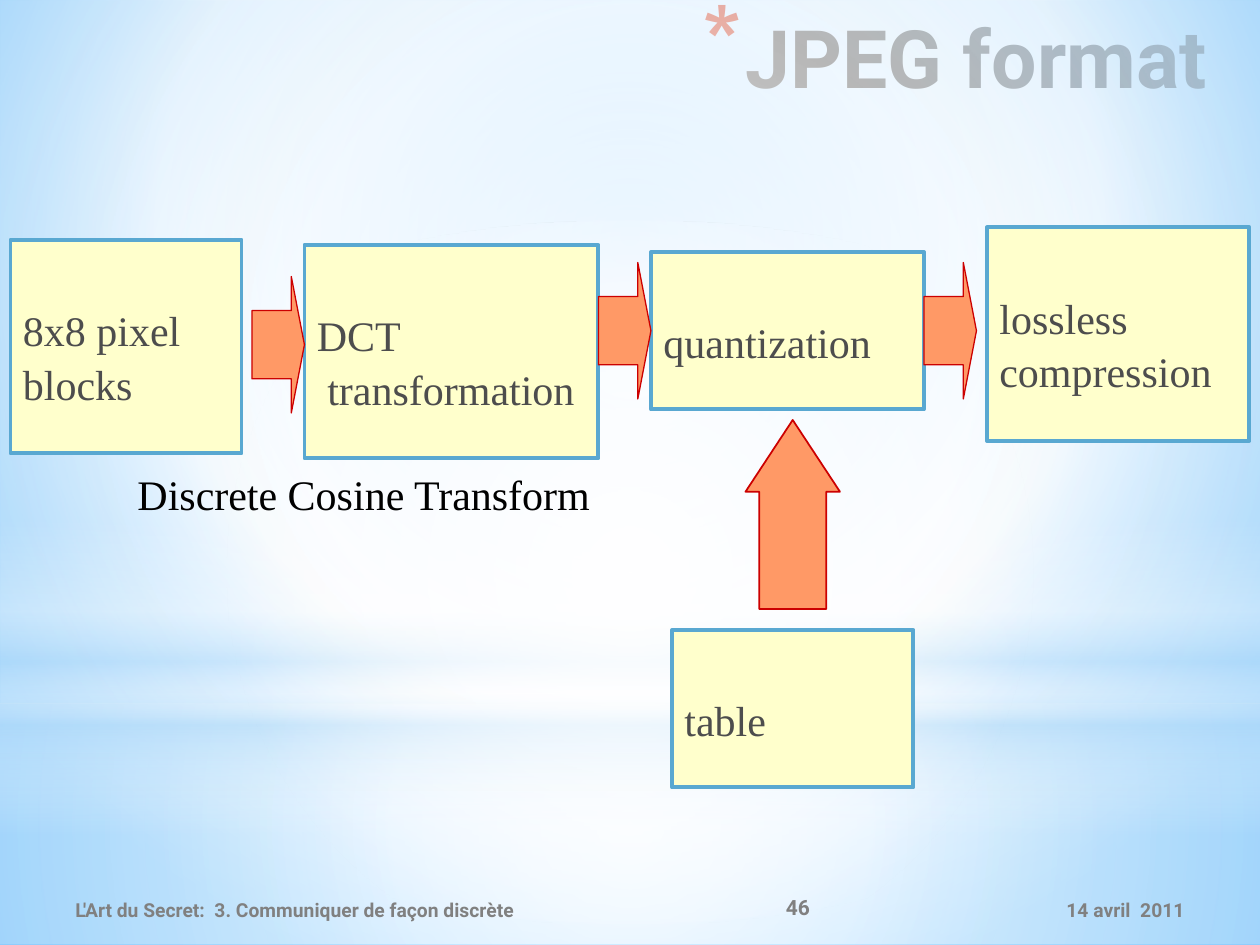
"""Build the slide showing the stages of the JPEG format."""
from pptx import Presentation
from pptx.dml.color import RGBColor
from pptx.enum.shapes import MSO_SHAPE
from pptx.enum.text import MSO_ANCHOR, MSO_AUTO_SIZE, PP_ALIGN
from pptx.oxml import parse_xml
from pptx.oxml.ns import nsdecls, qn
from pptx.util import Pt

RECTANGLE, OVAL = MSO_SHAPE.RECTANGLE, MSO_SHAPE.OVAL
RIGHT_ARROW, UP_ARROW = MSO_SHAPE.RIGHT_ARROW, MSO_SHAPE.UP_ARROW
TOP, MIDDLE = MSO_ANCHOR.TOP, MSO_ANCHOR.MIDDLE
LEFT, CENTER, RIGHT = PP_ALIGN.LEFT, PP_ALIGN.CENTER, PP_ALIGN.RIGHT
COLORS = {
    "white": "FFFFFF", "sky": "B4DCFA", "light blue": "9ED5FF", "deep blue": "5BB9FF",
    "cream": "FFFFCC", "box line": "59A8D1", "box text": "4D4D4D",
    "orange": "FF9966", "red": "CC0000", "bullet": "C3260C",
    "title": "404040", "footer": "808080", "black": "000000",
}
CENTERED = '<a:path path="circle"><a:fillToRect l="50000" t="50000" r="50000" b="50000"/></a:path>'
OFF_CENTER = '<a:path path="circle"><a:fillToRect l="20000" t="10000" r="20000" b="60000"/></a:path>'
DOWNWARD = '<a:lin ang="5400000" scaled="0"/>'


def paint_gradient(fill, element, stops, direction):
    fill.gradient()
    plain = next(element.iter(qn("a:gradFill")))
    stop_xml = "".join(
        f'<a:gs pos="{position * 1000}"><a:srgbClr val="{COLORS[color]}">'
        f'<a:alpha val="{opacity * 1000}"/></a:srgbClr></a:gs>'
        for position, color, opacity in stops)
    plain.getparent().replace(plain, parse_xml(
        f'<a:gradFill {nsdecls("a")} rotWithShape="1"><a:gsLst>{stop_xml}</a:gsLst>{direction}</a:gradFill>'))


def write_text(shape, lines, font, color, frame, alignment=LEFT, gap=0):
    text_frame = shape.text_frame
    for name, value in frame.items():
        setattr(text_frame, name, value)
    text_frame.text = "\n".join(lines)
    for paragraph in text_frame.paragraphs:
        paragraph.alignment = alignment
        paragraph.space_after = Pt(gap)
        for name, value in font.items():
            setattr(paragraph.runs[0].font, name, value)
        paragraph.runs[0].font.color.rgb = RGBColor.from_string(COLORS[color])


presentation = Presentation()
presentation.slide_width, presentation.slide_height = Pt(720), Pt(540)
slide = presentation.slides.add_slide(presentation.slide_layouts[5])
title = slide.shapes.title

paint_gradient(slide.background.fill, slide.element,
               [(0, "light blue", 100), (60, "white", 100), (100, "deep blue", 100)], OFF_CENTER)
glows = [
    (RECTANGLE, 402, 138, [(0, "white", 91), (37, "white", 76), (100, "sky", 79)], CENTERED),
    (RECTANGLE, 0, 402, [(0, "white", 89), (48, "white", 62), (100, "sky", 79)], CENTERED),
    (RECTANGLE, 297, 180, [(0, "white", 0), (29, "white", 30), (45, "sky", 40),
                           (55, "white", 26), (65, "sky", 60), (100, "white", 0)], DOWNWARD),
    (OVAL, 126, 402, [(0, "white", 100), (56, "white", 0)], CENTERED),
]
for kind, top, height, stops, direction in glows:
    shape = slide.shapes.add_shape(kind, 0, Pt(top), Pt(720), Pt(height))
    shape.shadow.inherit = False
    shape.line.fill.background()
    paint_gradient(shape.fill, shape.element, stops, direction)

title.left, title.top, title.width, title.height = Pt(0), Pt(1), Pt(708), Pt(90)
write_text(title, ["JPEG format "], {"name": "Roboto", "size": Pt(46), "bold": True}, "title",
           {"vertical_anchor": TOP, "auto_size": MSO_AUTO_SIZE.NONE, "word_wrap": True}, RIGHT)
properties = title.text_frame.paragraphs[0]._p.get_or_add_pPr()
properties.set("marL", str(Pt(25)))
properties.set("indent", str(-Pt(25)))
for bullet_xml in (f'<a:buClr {nsdecls("a")}><a:srgbClr val="{COLORS["bullet"]}"/></a:buClr>',
                   f'<a:buSzPct {nsdecls("a")} val="128000"/>',
                   f'<a:buChar {nsdecls("a")} char="*"/>'):
    properties.append(parse_xml(bullet_xml))

body_font = {"name": "Times New Roman", "size": Pt(24)}
box_frame = {"vertical_anchor": TOP, "word_wrap": True, "margin_top": Pt(37)}
boxes = [
    (6, 137, 132, 122, ["8x8 pixel", "blocks"]),
    (564, 130, 150, 122, ["lossless", "compression"]),
    (372, 144, 156, 90, ["quantization"]),
    (174, 140, 168, 122, ["DCT", " transformation"]),
    (384, 360, 138, 90, ["table"]),
]
arrows = [
    (RIGHT_ARROW, 528, 150, 30, 78, (0.5, 0.25), 0.75),
    (RIGHT_ARROW, 342, 150, 30, 78, (0.5, 0.25), 0.75),
    (RIGHT_ARROW, 144, 158, 30, 78, (0.5, 0.25), 0.75),
    (UP_ARROW, 426, 240, 54, 108, (0.71, 0.76), 1),
]
outlines = [(RECTANGLE, *box[:4], (), 2.25, "cream", "box line", box[4]) for box in boxes]
outlines += [(*arrow, "orange", "red", []) for arrow in arrows]
for kind, left, top, width, height, adjustments, weight, fill, line, lines in outlines:
    shape = slide.shapes.add_shape(kind, Pt(left), Pt(top), Pt(width), Pt(height))
    shape.shadow.inherit = False
    shape.fill.solid()
    shape.fill.fore_color.rgb = RGBColor.from_string(COLORS[fill])
    shape.line.color.rgb = RGBColor.from_string(COLORS[line])
    shape.line.width = Pt(weight)
    for index, adjustment in enumerate(adjustments):
        shape.adjustments[index] = adjustment
    if lines:
        write_text(shape, lines, body_font, "box text", box_frame, gap=1.8)

footer_font = {"name": "Roboto", "size": Pt(11), "bold": True}
number_font = {**footer_font, "size": Pt(12)}
footer_frame = {"vertical_anchor": MIDDLE, "word_wrap": True}
caption_frame = {"vertical_anchor": TOP, "word_wrap": False}
labels = [
    (486, 505.5, 198, 29, "14 avril  2011", footer_font, "footer", footer_frame, RIGHT),
    (36, 505.5, 390, 29, "L'Art du Secret:  3. Communiquer de façon discrète",
     footer_font, "footer", footer_frame, LEFT),
    (71.5, 264, 274, 36, "Discrete Cosine Transform", body_font, "black", caption_frame, LEFT),
    (426, 504, 60, 29, "46", number_font, "footer", footer_frame, CENTER),
]
for left, top, width, height, text, font, color, frame, alignment in labels:
    shape = slide.shapes.add_textbox(Pt(left), Pt(top), Pt(width), Pt(height))
    write_text(shape, [text], font, color, frame, alignment)

presentation.save("out.pptx")
